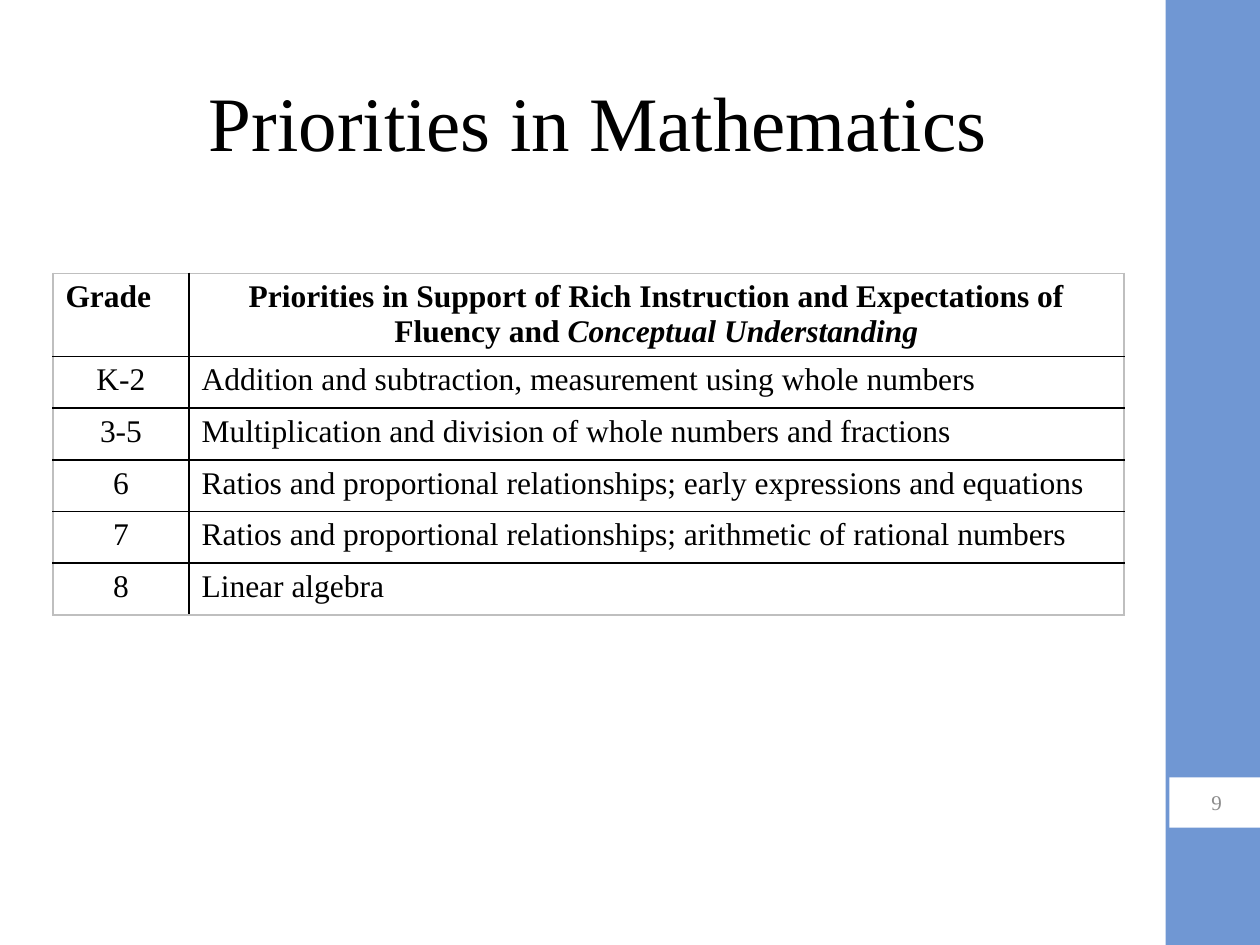
from dataclasses import dataclass

import lxml.etree
import pptx
import pptx.dml.color
import pptx.enum.shapes
import pptx.enum.text
import pptx.oxml.ns
import pptx.util

Inches = pptx.util.Inches
ALIGN = pptx.enum.text.PP_ALIGN
MIDDLE = pptx.enum.text.MSO_ANCHOR.MIDDLE


@dataclass(frozen=True)
class Theme:
    font: str = "Times New Roman"
    text: str = "000000"
    band: str = "7097D3"
    paper: str = "FFFFFF"
    number: str = "8C8C8C"
    rule: str = "000000"
    frame: str = "BFBFBF"
    title_pt: int = 44
    table_pt: int = 18
    number_pt: int = 12
    rule_pt: int = 1


@dataclass(frozen=True)
class Priority:
    grade: str
    focus: str


THEME = Theme()
HEADING = "Priorities in Support of Rich Instruction and Expectations of Fluency and "
HEADING_EMPHASIS = "Conceptual Understanding"
PRIORITIES = [
    Priority("K-2", "Addition and subtraction, measurement using whole numbers"),
    Priority("3-5", "Multiplication and division of whole numbers and fractions"),
    Priority("6", "Ratios and proportional relationships; early expressions and equations"),
    Priority("7", "Ratios and proportional relationships; arithmetic of rational numbers"),
    Priority("8", "Linear algebra"),
]
COLUMN_WIDTHS = (1.08, 7.42)
HEADER_HEIGHT, ROW_HEIGHT = 0.66, 0.41


def rgb(color: str) -> pptx.dml.color.RGBColor:
    return pptx.dml.color.RGBColor.from_string(color)


def format_text(tf, size: int, color: str, align=ALIGN.LEFT, bold: bool = False) -> None:
    for p in tf.paragraphs:
        p.alignment = align
        for r in p.runs:
            r.font.name = THEME.font
            r.font.size = pptx.util.Pt(size)
            r.font.bold = bold
            r.font.color.rgb = rgb(color)


def add_box(s, left: float, top: float, width: float, height: float, color: str):
    sp = s.shapes.add_shape(
        pptx.enum.shapes.MSO_SHAPE.RECTANGLE,
        Inches(left), Inches(top), Inches(width), Inches(height),
    )
    sp.shadow.inherit = False
    sp.fill.solid()
    sp.fill.fore_color.rgb = rgb(color)
    sp.line.fill.background()
    return sp


def set_borders(cell, outer: dict[str, bool]) -> None:
    """Draw each side of a cell: frame colour outside, rule colour inside."""
    qn = pptx.oxml.ns.qn
    props = cell._tc.get_or_add_tcPr()
    for i, (side, is_outer) in enumerate(outer.items()):
        ln = lxml.etree.Element(qn(f"a:ln{side}"), w=str(pptx.util.Pt(THEME.rule_pt)))
        fill = lxml.etree.SubElement(ln, qn("a:solidFill"))
        color = THEME.frame if is_outer else THEME.rule
        lxml.etree.SubElement(fill, qn("a:srgbClr"), val=color)
        props.insert(i, ln)


def add_priorities(s, left: float, top: float) -> None:
    heights = [HEADER_HEIGHT] + [ROW_HEIGHT] * len(PRIORITIES)
    table = s.shapes.add_table(
        len(heights), len(COLUMN_WIDTHS), Inches(left), Inches(top),
        Inches(sum(COLUMN_WIDTHS)), Inches(sum(heights)),
    ).table
    for column, width in zip(table.columns, COLUMN_WIDTHS):
        column.width = Inches(width)
    for row, height in zip(table.rows, heights):
        row.height = Inches(height)

    rows = [("Grade", HEADING)] + [(item.grade, item.focus) for item in PRIORITIES]
    last_row, last_column = len(rows) - 1, len(COLUMN_WIDTHS) - 1
    for i, texts in enumerate(rows):
        for j, text in enumerate(texts):
            cell = table.cell(i, j)
            cell.fill.background()
            cell.text_frame.text = text
            is_header = i == 0
            if is_header and j == last_column:
                r = cell.text_frame.paragraphs[0].add_run()
                r.text = HEADING_EMPHASIS
                r.font.italic = True
            # Grades are centred below their label; the focus heading is centred
            align = ALIGN.CENTER if is_header == (j == last_column) else ALIGN.LEFT
            format_text(cell.text_frame, THEME.table_pt, THEME.text, align, is_header)
            set_borders(cell, {
                "L": j == 0, "R": j == last_column,
                "T": is_header, "B": i == last_row,
            })


def main() -> None:
    prs = pptx.Presentation()
    prs.slide_width, prs.slide_height = Inches(10), Inches(7.5)
    s = prs.slides.add_slide(prs.slide_layouts[5])

    # Side band, kept behind the title
    band = add_box(s, 9.25, 0, 0.75, 7.5, THEME.band)
    s.shapes.title._element.addprevious(band._element)

    # Title
    title = s.shapes.title
    title.left, title.top = Inches(0.5), Inches(0.33)
    title.width, title.height = Inches(8.5), Inches(1.25)
    title.text_frame.text = "Priorities in Mathematics"
    title.text_frame.vertical_anchor = MIDDLE
    format_text(title.text_frame, THEME.title_pt, THEME.text, ALIGN.CENTER)

    # Priorities by grade
    add_priorities(s, 0.42, 2.17)

    # Page number
    number = add_box(s, 9.28, 6.17, 0.75, 0.4, THEME.paper)
    number.text_frame.text = "9"
    number.text_frame.vertical_anchor = MIDDLE
    format_text(number.text_frame, THEME.number_pt, THEME.number, ALIGN.CENTER)

    prs.save("out.pptx")


if __name__ == "__main__":
    main()
